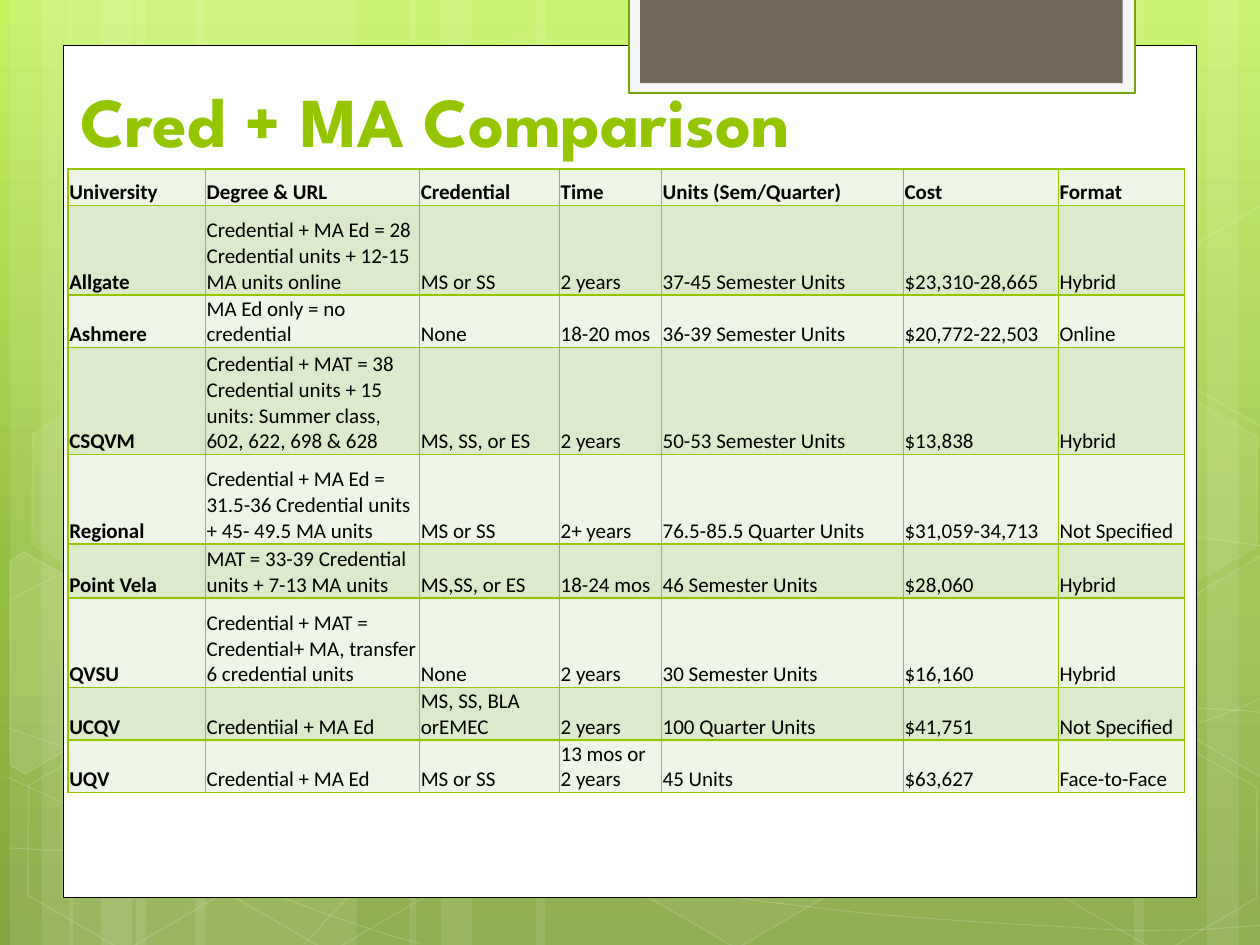
import math
from copy import deepcopy

from lxml import etree
from pptx import Presentation
from pptx import util as u
from pptx.dml.color import RGBColor
from pptx.enum import shapes, text
from pptx.oxml import ns

PX = 9144  # EMU per px, 100 px to the inch

WHITE = RGBColor(0xFF, 0xFF, 0xFF)
BLACK = RGBColor(0, 0, 0)
LIME = RGBColor(0x94, 0xC6, 0x00)
TAB_EDGE = RGBColor(0x74, 0xA5, 0x10)
TAB_FRAME = RGBColor(0xF5, 0xF5, 0xF5)
TAB_CORE = RGBColor(0x71, 0x68, 0x5A)
BANDS = (RGBColor(0xEE, 0xF5, 0xE7), RGBColor(0xDC, 0xEA, 0xCC))
SKY = ((0, RGBColor(0xC3, 0xF3, 0x5F)),
       (0.62, RGBColor(0x93, 0xBF, 0x3F)),
       (1, RGBColor(0x81, 0xA5, 0x3E)))

# left, width and rotation of the full-height light stripes
STRIPES = [(108, 175, 0), (8, 50, 0), (33, 83, 0), (155, 175, 0), (55, 50, 0), (80, 83, 0),
           (733, 175, 180), (958, 50, 180), (900, 83, 180),
           (425, 308, 0), (325, 50, 0), (350, 83, 0)]

# start point, then two control points and an end point for each cubic piece
WAVES = [
    [(7, 673), (61, 676), (115, 679), (190, 678), (265, 677), (358, 675), (458, 665),
     (558, 655), (700, 636), (792, 617), (883, 598), (977, 568), (1007, 551)],
    [(7, 477), (36, 461), (65, 446), (121, 431), (178, 416), (259, 394), (347, 387),
     (436, 380), (544, 379), (654, 387), (764, 395), (947, 426), (1007, 434)],
    [(6, 617), (127, 672), (247, 727), (334, 749)],
    [(7, 578), (38, 589), (70, 600), (128, 616), (186, 631), (273, 656), (357, 673),
     (440, 690), (545, 708), (628, 718), (711, 729), (800, 733), (853, 736),
     (905, 740), (919, 738), (945, 738), (971, 737), (989, 735), (1007, 734)],
    [(242, 749), (260, 729), (278, 709), (302, 691), (326, 673), (360, 653), (388, 639),
     (416, 625), (433, 619), (470, 609), (506, 599), (573, 585), (608, 578),
     (644, 571), (649, 571), (680, 569), (711, 566), (760, 563), (794, 562),
     (829, 561), (886, 562), (886, 562), (908, 562), (931, 562), (953, 562),
     (971, 563), (988, 564), (997, 565), (1006, 566), (1003, 565), (1006, 566)],
]

TILT = 30  # degrees, shared by all hexagons
# left, top, fill opacity, line opacity
HEXAGONS = [(334, 36, 4, 8), (497, 589, 6, 12), (11, 591, 0, 12), (14, 312, 7, 8),
            (174, 592, 0, 12), (753, 453, 10, 12), (834, 593, 0, 12), (834, 314, 7, 8)]

# centre, outline as seen, fill opacity of the hexagons cut by the slide edge
CUT_HEXAGONS = [
    ((36, 535), [(8, 445), (19, 438), (96, 482), (95, 570), (20, 614), (8, 607)], 10),
    ((985, 520), [(926, 485), (1001, 441), (1009, 446), (1009, 613), (1002, 617), (926, 573)], 4),
    ((985, 241), [(926, 207), (1001, 163), (1010, 168), (1009, 335), (1002, 339), (926, 295)], 0),
]

COLUMNS = [109, 170, 111, 81, 192, 123, 100]
ROWS = [29, 71, 29, 85, 71, 43, 71, 29, 29]
PROGRAMS = [
    ("University", "Degree & URL", "Credential", "Time", "Units (Sem/Quarter)", "Cost", "Format"),
    ("Allgate", "Credential + MA Ed = 28 Credential units + 12-15 MA units online",
     "MS or SS", "2 years", "37-45 Semester Units", "$23,310-28,665", "Hybrid"),
    ("Ashmere", "MA Ed only = no credential",
     "None", "18-20 mos", "36-39 Semester Units", "$20,772-22,503", "Online"),
    ("CSQVM", "Credential + MAT = 38 Credential units + 15 units: Summer class, 602, 622, 698 & 628",
     "MS, SS, or ES", "2 years", "50-53 Semester Units", "$13,838", "Hybrid"),
    ("Regional", "Credential + MA Ed = 31.5-36 Credential units + 45- 49.5 MA units",
     "MS or SS", "2+ years", "76.5-85.5 Quarter Units", "$31,059-34,713", "Not Specified"),
    ("Point Vela", "MAT = 33-39 Credential units + 7-13 MA units",
     "MS,SS, or ES", "18-24 mos", "46 Semester Units", "$28,060", "Hybrid"),
    ("QVSU", "Credential + MAT = Credential+ MA, transfer 6 credential units",
     "None", "2 years", "30 Semester Units", "$16,160", "Hybrid"),
    ("UCQV", "Credentiial + MA Ed",
     "MS, SS, BLA orEMEC", "2 years", "100 Quarter Units", "$41,751", "Not Specified"),
    ("UQV", "Credential + MA Ed",
     "MS or SS", "13 mos or 2 years", "45 Units", "$63,627", "Face-to-Face"),
]


def tint(fill, owner, colour, alpha):
    """Fill with a colour at alpha percent; owner is the XML parent of the fill."""
    if colour is None or alpha == 0:
        fill.background()
        return
    fill.solid()
    fill.fore_color.rgb = colour
    if alpha < 100:
        rgb = owner.find(ns.qn("a:solidFill")).find(ns.qn("a:srgbClr"))
        etree.SubElement(rgb, ns.qn("a:alpha"), val=str(alpha * 1000))


def paint(shape, fill=None, line=None, width=1, fill_alpha=100, line_alpha=100):
    shape.shadow.inherit = False
    shape.line.width = u.Pt(width)
    properties = shape.element.spPr
    tint(shape.fill, properties, fill, fill_alpha)
    tint(shape.line.fill, properties.find(ns.qn("a:ln")), line, line_alpha)


def block(slide, kind, left, top, width, height):
    return slide.shapes.add_shape(kind, left * PX, top * PX, width * PX, height * PX)


def outline(slide, box, points, close):
    left, top = box[:2]
    (x, y), *rest = [(px * PX, py * PX) for px, py in points]
    builder = slide.shapes.build_freeform(x, y, scale=1.0)
    builder.add_line_segments(rest, close=close)
    return builder.convert_to_shape(left * PX, top * PX)


def bend(shape):
    """Turn each three straight segments into one cubic Bézier piece."""
    segments = list(shape.element.iter(ns.qn("a:lnTo")))
    for first, second, third in zip(*[iter(segments)] * 3):
        first.tag = ns.qn("a:cubicBezTo")
        for segment in (second, third):
            first.append(segment[0])
            segment.getparent().remove(segment)


def turn_back(points, centre):
    """Undo the tilt about the centre, so that rotation brings it back."""
    cos, sin = math.cos(math.radians(TILT)), math.sin(math.radians(TILT))
    cx, cy = centre
    return [(cx + (x - cx) * cos + (y - cy) * sin, cy + (y - cy) * cos - (x - cx) * sin)
            for x, y in points]


def add_sky(slide):
    sky = slide.background.fill
    sky.gradient()
    sky.gradient_angle = 270
    stops = slide.element.find(".//" + ns.qn("a:gsLst"))
    stops.append(deepcopy(stops[-1]))
    for stop, (position, colour) in zip(sky.gradient_stops, SKY):
        stop.position = position
        stop.color.rgb = colour


def add_backdrop(slide, box):
    left, top, _, height = box
    for x, width, rotation in STRIPES:
        stripe = block(slide, shapes.MSO_SHAPE.RECTANGLE, left + x, top, width, height)
        stripe.rotation = rotation
        paint(stripe, WHITE, fill_alpha=10)
    for knots in WAVES:
        wave = outline(slide, box, knots, close=False)
        bend(wave)
        paint(wave, line=WHITE, width=0.5, line_alpha=20)
    for x, y, fill_alpha, line_alpha in HEXAGONS:
        hexagon = block(slide, shapes.MSO_SHAPE.HEXAGON, left + x, top + y, 175, 152)
        hexagon.adjustments[0] = 0.285
        hexagon.rotation = TILT
        paint(hexagon, WHITE, WHITE, 1, fill_alpha, line_alpha)
    for centre, corners, fill_alpha in CUT_HEXAGONS:
        hexagon = outline(slide, box, turn_back(corners, centre), close=True)
        hexagon.rotation = TILT
        paint(hexagon, WHITE, WHITE, 1, fill_alpha, 12)


def add_card(slide, box):
    """White page with the framed tab hanging over its top edge."""
    left, top, width, height = box
    rectangle = shapes.MSO_SHAPE.RECTANGLE
    paint(block(slide, rectangle, left, top, width, height), WHITE, BLACK, 0.5)
    paint(block(slide, rectangle, left + 449, top - 38, 402, 76), TAB_FRAME, TAB_EDGE, 1.25)
    paint(block(slide, rectangle, left + 458, top - 38, 383, 68), TAB_CORE)


def add_title(slide, box):
    title = slide.shapes.title
    title.element.getparent().append(title.element)  # in front of the card
    title.left, title.top, title.width, title.height = [side * PX for side in box]
    frame = title.text_frame
    frame.text = "Cred + MA Comparison"
    frame.vertical_anchor = text.MSO_ANCHOR.BOTTOM
    frame.auto_size = text.MSO_AUTO_SIZE.NONE
    heading = frame.paragraphs[0]
    heading.alignment = text.PP_ALIGN.LEFT
    style_font(heading.font, "League Spartan", 40, LIME, True)


def style_font(font, name, size, colour, bold):
    font.name, font.size, font.bold = name, u.Pt(size), bold
    font.color.rgb = colour


def add_borders(cell):
    properties = cell._tc.get_or_add_tcPr()
    for side in ("lnL", "lnR", "lnT", "lnB"):
        edge = etree.SubElement(properties, ns.qn("a:" + side), w=str(u.Pt(1)))
        fill = etree.SubElement(edge, ns.qn("a:solidFill"))
        etree.SubElement(fill, ns.qn("a:srgbClr"), val=str(LIME))


def add_comparison(slide, box):
    grid = slide.shapes.add_table(len(ROWS), len(COLUMNS), *[side * PX for side in box]).table
    grid.first_row = grid.horz_banding = False
    for column, width in zip(grid.columns, COLUMNS):
        column.width = width * PX
    for r, (height, program) in enumerate(zip(ROWS, PROGRAMS)):
        grid.rows[r].height = height * PX
        for c, entry in enumerate(program):
            cell = grid.cell(r, c)
            cell.text = entry
            cell.vertical_anchor = text.MSO_ANCHOR.BOTTOM
            cell.margin_left = cell.margin_right = cell.margin_top = PX
            cell.margin_bottom = 0
            add_borders(cell)
            cell.fill.solid()
            cell.fill.fore_color.rgb = BANDS[r % 2]
            style_font(cell.text_frame.paragraphs[0].font, "Calibri", 12, BLACK, r == 0 or c == 0)


def main():
    deck = Presentation()
    deck.slide_width, deck.slide_height = 1000 * PX, 750 * PX
    slide = deck.slides.add_slide(deck.slide_layouts[5])
    add_sky(slide)
    add_backdrop(slide, (0, 0, 1000, 750))
    add_card(slide, (50, 36, 900, 676))
    add_title(slide, (54, 29, 828, 104))
    add_comparison(slide, (54, 134, sum(COLUMNS), sum(ROWS)))
    deck.save("out.pptx")


if __name__ == "__main__":
    main()
